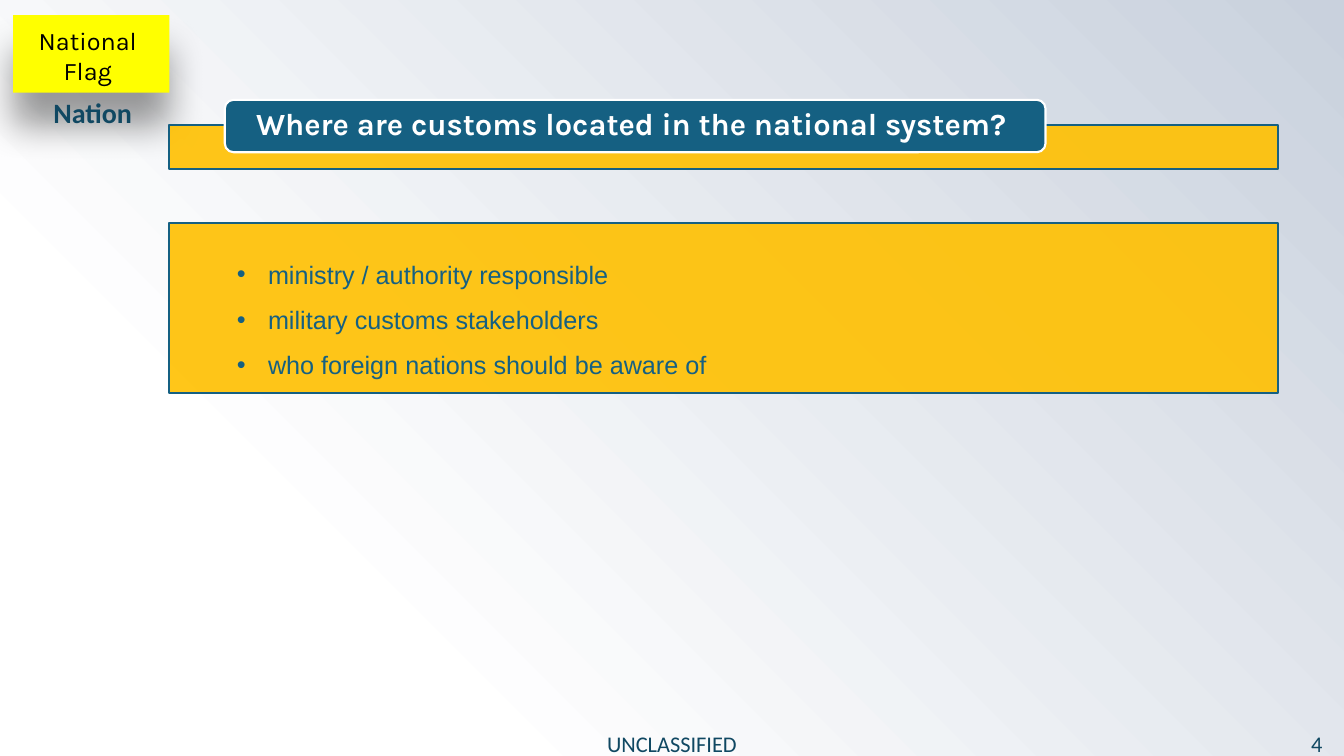
from lxml import etree
from pptx import Presentation
from pptx.dml.color import RGBColor
from pptx.enum.shapes import MSO_SHAPE
from pptx.enum.text import MSO_ANCHOR, MSO_AUTO_SIZE, PP_ALIGN
from pptx.oxml import parse_xml
from pptx.oxml.ns import nsdecls, qn
from pptx.util import Inches, Pt

RECTANGLE, ROUNDED = MSO_SHAPE.RECTANGLE, MSO_SHAPE.ROUNDED_RECTANGLE
TOP, MIDDLE = MSO_ANCHOR.TOP, MSO_ANCHOR.MIDDLE
LEFT, CENTER = PP_ALIGN.LEFT, PP_ALIGN.CENTER

COLORS = {
    "navy": "104862",
    "teal": "156082",
    "amber": "FFC000",
    "yellow": "FFFF00",
    "black": "000000",
    "white": "FFFFFF",
    "mist": "C9D1DD",
}

deck = Presentation()
deck.slide_width, deck.slide_height = Inches(13.33), Inches(7.5)
page = deck.slides.add_slide(deck.slide_layouts[5])


def add_panel(kind, place, fill, line=None, alpha=None):
    panel = page.shapes.add_shape(kind, *map(Inches, place))
    panel.shadow.inherit = False
    panel.fill.solid()
    panel.fill.fore_color.rgb = RGBColor.from_string(COLORS[fill])
    if alpha:
        color = panel.element.spPr.find(qn("a:solidFill"))[0]
        etree.SubElement(color, qn("a:alpha"), val=str(alpha * 1000))
    if line:
        panel.line.color.rgb = RGBColor.from_string(COLORS[line])
        panel.line.width = Pt(1.5)
    else:
        panel.line.fill.background()
    return panel


def write(box, place, lines, font, size, color, bold=False, align=CENTER, anchor=MIDDLE, spacing=1.0):
    box.left, box.top, box.width, box.height = map(Inches, place)
    frame = box.text_frame
    frame.text = "\n".join(lines)
    frame.word_wrap = True
    frame.auto_size = MSO_AUTO_SIZE.NONE
    frame.vertical_anchor = anchor
    for para in frame.paragraphs:
        para.alignment = align
        para.line_spacing = spacing
        para.font.name, para.font.size, para.font.bold = font, Pt(size), bold
        para.font.color.rgb = RGBColor.from_string(COLORS[color])
    return frame


background = page.background.fill
background.gradient()
for stop, name, position in zip(background.gradient_stops, ("mist", "white"), (0, 0.76)):
    stop.color.rgb = RGBColor.from_string(COLORS[name])
    stop.position = position
gradient = page.element.cSld.find(".//" + qn("a:gradFill"))
gradient.replace(gradient.find(qn("a:lin")), parse_xml(
    f'<a:path {nsdecls("a")} path="circle"><a:fillToRect l="100000" b="100000"/></a:path>'))

flag = add_panel(RECTANGLE, (0.13, 0.15, 1.55, 0.77), "yellow")
flag.element.spPr.find(qn("a:effectLst")).append(parse_xml(
    f'<a:outerShdw {nsdecls("a")} blurRad="{Pt(26)}" dist="{Pt(24)}" dir="5400000" algn="t" rotWithShape="0">'
    f'<a:srgbClr val="{COLORS["black"]}"><a:alpha val="39000"/></a:srgbClr></a:outerShdw>'))

labels = [
    ((5.81, 7.25, 1.71, 0.25), "UNCLASSIFIED", "Calibri", 16, "navy", False, MIDDLE, 1.0),
    ((12.79, 7.25, 0.54, 0.25), "4", "Calibri", 16, "navy", False, MIDDLE, 1.0),
    ((0.19, 0.2, 1.36, 0.71), "National Flag", "Karla", 18, "black", False, TOP, 1.0),
    ((0.09, 0.81, 1.66, 0.66), "Nation", "Calibri", 20, "navy", True, MIDDLE, 0.9),
]
for place, text, font, size, color, bold, anchor, spacing in labels:
    label = page.shapes.add_textbox(0, 0, 0, 0)
    write(label, place, [text], font, size, color, bold, anchor=anchor, spacing=spacing)

for top, height in ((1.24, 0.44), (2.21, 1.69)):
    add_panel(RECTANGLE, (1.68, top, 11, height), "amber", "teal", 90)
add_panel(ROUNDED, (2.23, 0.99, 8.14, 0.52), "teal", "white")

title = page.shapes.title
title.element.getparent().append(title.element)
heading = write(title, (2.25, 1.01, 8.09, 0.47), ["Where are customs located in the national system?"],
                "Karla", 22, "white", True, LEFT, spacing=0.9)
heading.margin_left = heading.margin_right = Inches(0.29)
heading.margin_top = heading.margin_bottom = 0

points = page.shapes.add_textbox(0, 0, 0, 0)
body = points.text_frame
topics = ["ministry / authority responsible", "military customs stakeholders", "who foreign nations should be aware of"]
body.text = "\n".join(topics)
for para in body.paragraphs:
    properties = para._p.get_or_add_pPr()
    properties.set("marL", str(Inches(0.81)))
    properties.set("indent", str(Inches(-0.31)))
    etree.SubElement(properties, qn("a:buFont"), typeface="Arial")
    etree.SubElement(properties, qn("a:buChar"), char="•")
    para.level = 1
    para.alignment = LEFT
    para.line_spacing = 1.5
    para.font.name, para.font.size = "Arial", Pt(18)
    para.font.color.rgb = RGBColor.from_string(COLORS["teal"])
body.word_wrap = False
body.vertical_anchor = MIDDLE
points.left, points.top, points.width, points.height = map(Inches, (1.75, 2.39, 5.48, 1.41))

deck.save("out.pptx")
